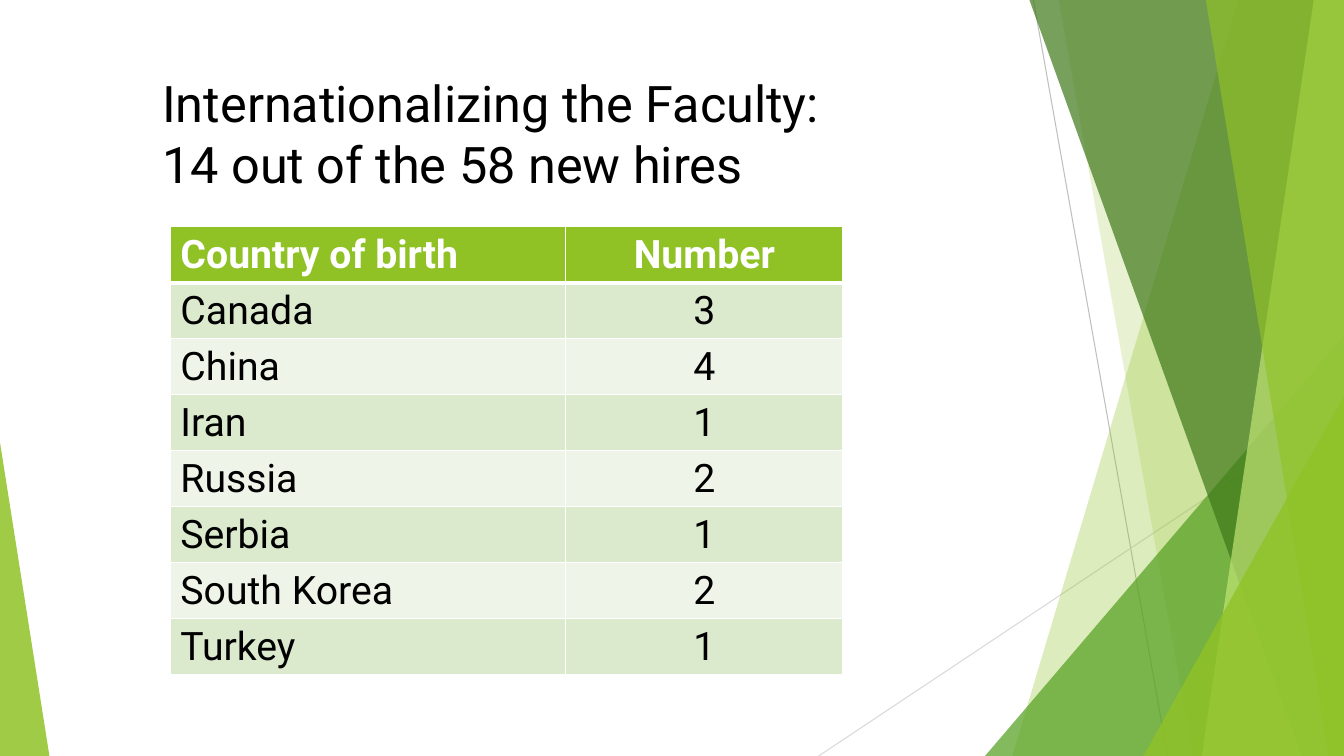
from lxml.etree import SubElement
from pptx import Presentation
from pptx.dml.color import RGBColor
from pptx.enum.shapes import MSO_CONNECTOR, MSO_SHAPE
from pptx.enum.text import MSO_ANCHOR, PP_ALIGN
from pptx.oxml.ns import qn
from pptx.util import Inches, Pt

COLORS = {
    "black": "000000",
    "white": "FFFFFF",
    "lime": "90C226",
    "green": "54A021",
    "forest": "3F7819",
    "pale lime": "C0E474",
    "dark band": "DBE9CD",
    "light band": "EEF4E8",
    "gray": "BFBFBF",
    "light gray": "D9D9D9",
}
WIDTH, HEIGHT = 13.33, 7.5

HIRES = [
    ("Country of birth", "Number"),
    ("Canada", "3"),
    ("China", "4"),
    ("Iran", "1"),
    ("Russia", "2"),
    ("Serbia", "1"),
    ("South Korea", "2"),
    ("Turkey", "1"),
]


class FacultySlide:
    font_name = "Roboto"

    def __init__(self, presentation):
        self.slide = presentation.slides.add_slide(presentation.slide_layouts[5])
        self.shapes = self.slide.shapes

    def color(self, name):
        return RGBColor.from_string(COLORS[name])

    def style_text(self, paragraph, size, color, bold=False, align=PP_ALIGN.LEFT):
        paragraph.alignment = align
        paragraph.font.name = self.font_name
        paragraph.font.size = Pt(size)
        paragraph.font.bold = bold
        paragraph.font.color.rgb = self.color(color)

    def title(self, text, left, top, width, height):
        title = self.shapes.title
        title.left, title.top = Inches(left), Inches(top)
        title.width, title.height = Inches(width), Inches(height)
        title.text_frame.text = text
        title.text_frame.word_wrap = True
        title.text_frame.vertical_anchor = MSO_ANCHOR.TOP
        self.style_text(title.text_frame.paragraphs[0], 36, "black")

    def line(self, start, end, color):
        line = self.shapes.add_connector(
            MSO_CONNECTOR.STRAIGHT, *map(Inches, start + end))
        line.line.color.rgb = self.color(color)
        line.line.width = Pt(0.75)
        SubElement(line._element.spPr, qn("a:effectLst"))

    def paint(self, shape, color, opacity):
        shape.shadow.inherit = False
        shape.line.fill.background()
        shape.fill.solid()
        shape.fill.fore_color.rgb = self.color(color)
        tint = shape._element.spPr.find(qn("a:solidFill"))[0]
        SubElement(tint, qn("a:alpha"), val=str(opacity * 1000))

    def shard(self, top_left, top_right, bottom_right, bottom_left, color, opacity):
        corners = [(top_left, 0), (top_right, 0),
                   (bottom_right, HEIGHT), (bottom_left, HEIGHT)]
        points = [(Inches(x), Inches(y)) for x, y in corners]
        builder = self.shapes.build_freeform(*points[0])
        builder.add_line_segments(points[1:], close=True)
        self.paint(builder.convert_to_shape(), color, opacity)

    def triangle(self, left, top, right, apex, color, opacity):
        triangle = self.shapes.add_shape(
            MSO_SHAPE.ISOSCELES_TRIANGLE, Inches(left), Inches(top),
            Inches(right - left), Inches(HEIGHT - top))
        triangle.adjustments[0] = apex
        self.paint(triangle, color, opacity)

    def border(self, cell, side, width):
        edge = SubElement(cell._tc.get_or_add_tcPr(), qn(f"a:ln{side}"), w=str(Pt(width)))
        fill = SubElement(edge, qn("a:solidFill"))
        SubElement(fill, qn("a:srgbClr"), val=COLORS["white"])

    def table(self, rows, left, top, column_widths, row_height):
        table = self.shapes.add_table(
            len(rows), len(column_widths), Inches(left), Inches(top),
            Inches(sum(column_widths)), Inches(row_height * len(rows))).table
        for column, width in zip(table.columns, column_widths):
            column.width = Inches(width)
        for row_index, values in enumerate(rows):
            table.rows[row_index].height = Inches(row_height)
            header = row_index == 0
            band = "lime" if header else "dark band" if row_index % 2 else "light band"
            for column_index, value in enumerate(values):
                cell = table.cell(row_index, column_index)
                cell.text = value
                self.style_text(
                    cell.text_frame.paragraphs[0], 28,
                    "white" if header else "black", header,
                    PP_ALIGN.CENTER if column_index else PP_ALIGN.LEFT)
                for side in "LRTB":
                    under_header = (row_index, side) in ((0, "B"), (1, "T"))
                    self.border(cell, side, 3 if under_header else 1)
                cell.fill.solid()
                cell.fill.fore_color.rgb = self.color(band)


def main():
    presentation = Presentation()
    presentation.slide_width = Inches(WIDTH)
    presentation.slide_height = Inches(HEIGHT)
    faculty = FacultySlide(presentation)

    faculty.line((10.25, 0), (11.58, HEIGHT), "gray")
    faculty.line((WIDTH, 4.03), (8.12, HEIGHT), "light gray")
    faculty.shard(12.28, WIDTH, WIDTH, 10.04, "lime", 30)
    faculty.shard(10.5, WIDTH, WIDTH, 11.83, "lime", 20)
    faculty.triangle(9.77, 3.33, WIDTH, 1, "green", 72)
    faculty.shard(10.21, WIDTH, WIDTH, 12.91, "forest", 70)
    faculty.shard(13.03, WIDTH, WIDTH, 11.92, "pale lime", 70)
    faculty.shard(11.96, WIDTH, WIDTH, 13.18, "lime", 65)
    faculty.triangle(11.34, 3.93, WIDTH, 1, "lime", 80)
    faculty.triangle(0, 4.39, 0.49, 0, "lime", 85)

    faculty.title("Internationalizing the Faculty:\v14 out of the 58 new hires",
                  1.51, 0.67, 9.23, 1.44)
    faculty.table(HIRES, 1.69, 2.25, (3.92, 2.75), 0.55)
    presentation.save("out.pptx")


if __name__ == "__main__":
    main()
